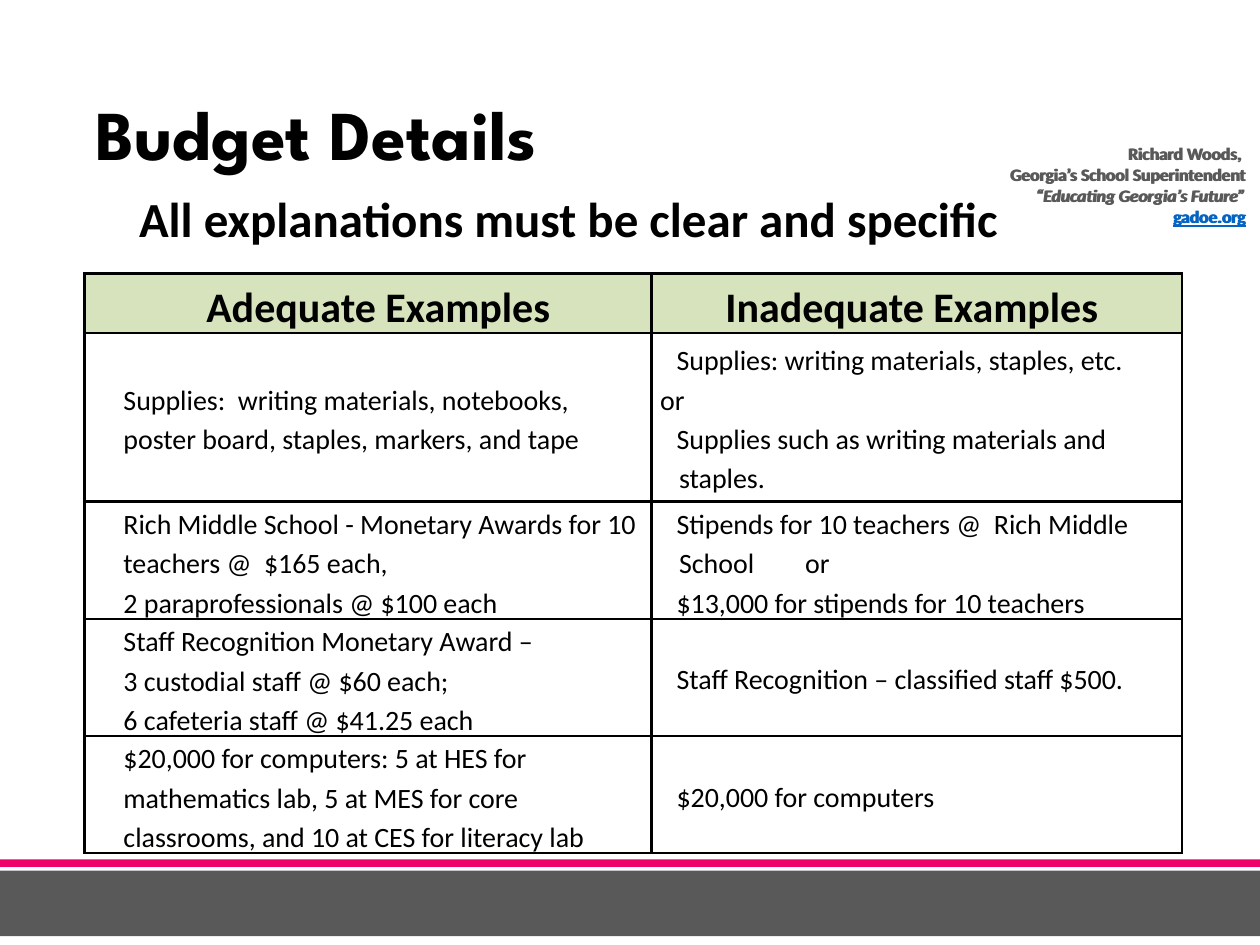
import pptx
import pptx.util
import pptx.dml.color
import pptx.enum.shapes
import pptx.enum.text
from lxml import etree
from pptx.oxml.ns import qn

Inches = pptx.util.Inches
Pt = pptx.util.Pt
RGB = pptx.dml.color.RGBColor
ALIGN = pptx.enum.text.PP_ALIGN
MIDDLE = pptx.enum.text.MSO_ANCHOR.MIDDLE

BLACK = RGB(0x00, 0x00, 0x00)
GRAY = RGB(0x59, 0x59, 0x59)
PINK = RGB(0xEC, 0x02, 0x69)
GREEN = RGB(0xD6, 0xE3, 0xBC)
BLUE = RGB(0x05, 0x63, 0xC1)


def write(frame, text, size=16, font="Calibri", color=BLACK, bold=False, italic=False,
          under=False, align=ALIGN.LEFT, left=0, first=0, tab=None, space=1.0, more=False):
    """Write one paragraph; more=True adds it below those already there."""
    para = frame.add_paragraph() if more else frame.paragraphs[0]
    para.alignment = align
    para.line_spacing = space
    props = para._p.get_or_add_pPr()
    props.set("marL", str(Inches(left)))
    props.set("indent", str(Inches(first)))
    if tab:
        stops = etree.SubElement(props, qn("a:tabLst"))
        etree.SubElement(stops, qn("a:tab"), pos=str(Inches(tab)), algn="l")
    run = para.add_run()
    run.text = text
    run.font.size = Pt(size)
    run.font.name = font
    run.font.color.rgb = color
    run.font.bold = bold
    run.font.italic = italic
    run.font.underline = under


def add_box(left, top, width, height):
    box = slide.shapes.add_textbox(Inches(left), Inches(top), Inches(width), Inches(height))
    box.text_frame.word_wrap = True
    return box.text_frame


deck = pptx.Presentation()
deck.slide_width = Inches(10)
deck.slide_height = Inches(7.5)
slide = deck.slides.add_slide(deck.slide_layouts[6])

# Contact block, set twice with a slight offset
contact = [
    ("Richard Woods, ", {}),
    ("Georgia’s School Superintendent", {}),
    ("“Educating Georgia’s Future”", {"italic": True}),
    ("gadoe.org", {"color": BLUE, "under": True}),
]
for left, width in [(7.84, 2.14), (7.88, 2.11)]:
    frame = add_box(left, 1.12, width, 0.7)
    frame.vertical_anchor = MIDDLE
    for i, (text, style) in enumerate(contact):
        look = {"color": GRAY, **style}
        write(frame, text, size=10, bold=True, align=ALIGN.RIGHT, more=i > 0, **look)

# Footer bands
for left, top, width, height, color in [
    (0, 6.91, 10, 0.52, GRAY),
    (-0.02, 6.82, 10.02, 0.06, PINK),
]:
    band = slide.shapes.add_shape(pptx.enum.shapes.MSO_SHAPE.RECTANGLE, Inches(left),
                                  Inches(top), Inches(width), Inches(height))
    band.shadow.inherit = False
    band.fill.solid()
    band.fill.fore_color.rgb = color
    band.line.fill.background()

# Headings
frame = add_box(0.78, 1.45, 7.4, 0.57)
write(frame, "All explanations must be clear and specific", size=28, bold=True,
      align=ALIGN.CENTER, first=0.06)
frame = add_box(0.66, 0.37, 6.91, 1.45)
frame.vertical_anchor = MIDDLE
write(frame, "Budget Details", size=40, font="League Spartan", bold=True, space=0.9)

# Examples table: each cell is a list of paragraphs
rows = [
    (["Adequate Examples "], ["Inadequate Examples "]),
    (["Supplies:  writing materials, notebooks, poster board, staples, markers, and tape"],
     ["Supplies: writing materials, staples, etc.", "or",
      "Supplies such as writing materials and staples."]),
    (["Rich Middle School - Monetary Awards for 10 teachers @  $165 each,",
      "2 paraprofessionals @ $100 each"],
     ["Stipends for 10 teachers @  Rich Middle School\tor",
      "$13,000 for stipends for 10 teachers"]),
    (["Staff Recognition Monetary Award –", "3 custodial staff @ $60 each;",
      "6 cafeteria staff @ $41.25 each"],
     ["Staff Recognition – classified staff $500."]),
    (["$20,000 for computers: 5 at HES for mathematics lab, 5 at MES for core "
      "classrooms, and 10 at CES for literacy lab"],
     ["$20,000 for computers"]),
]
widths = [4.5, 4.21]
heights = [0.38, 1.34, 0.93, 0.93, 0.93]
table = slide.shapes.add_table(len(rows), len(widths), Inches(0.67), Inches(2.17),
                               Inches(sum(widths)), Inches(sum(heights))).table
table.first_row = False
table.horz_banding = False
for col, width in zip(table.columns, widths):
    col.width = Inches(width)
for row, height in zip(table.rows, heights):
    row.height = Inches(height)

for r, row in enumerate(rows):
    for c, lines in enumerate(row):
        cell = table.cell(r, c)
        cell.vertical_anchor = MIDDLE
        cell.margin_left = cell.margin_right = Inches(0.07)
        cell.margin_top = Inches(0.01)
        cell.margin_bottom = 0
        props = cell._tc.get_or_add_tcPr()
        for side in ("lnL", "lnR", "lnT", "lnB"):
            line = etree.SubElement(props, qn("a:" + side), w=str(Pt(1.5)))
            fill = etree.SubElement(line, qn("a:solidFill"))
            etree.SubElement(fill, qn("a:srgbClr"), val=str(BLACK))
        if r == 0:
            cell.fill.solid()
            cell.fill.fore_color.rgb = GREEN
            look = {"size": 24, "bold": True, "align": ALIGN.CENTER}
        else:
            cell.fill.background()
            look = {}
        for i, text in enumerate(lines):
            if c == 0:
                dent = {"left": 0.24}
            elif r == 0 or text == "or":
                dent = {}
            else:
                dent = {"left": 0.15, "first": -0.02}
            if "\t" in text:
                dent["tab"] = 0.95
            write(cell.text_frame, text, space=1.15, more=i > 0, **look, **dent)

deck.save("out.pptx")
